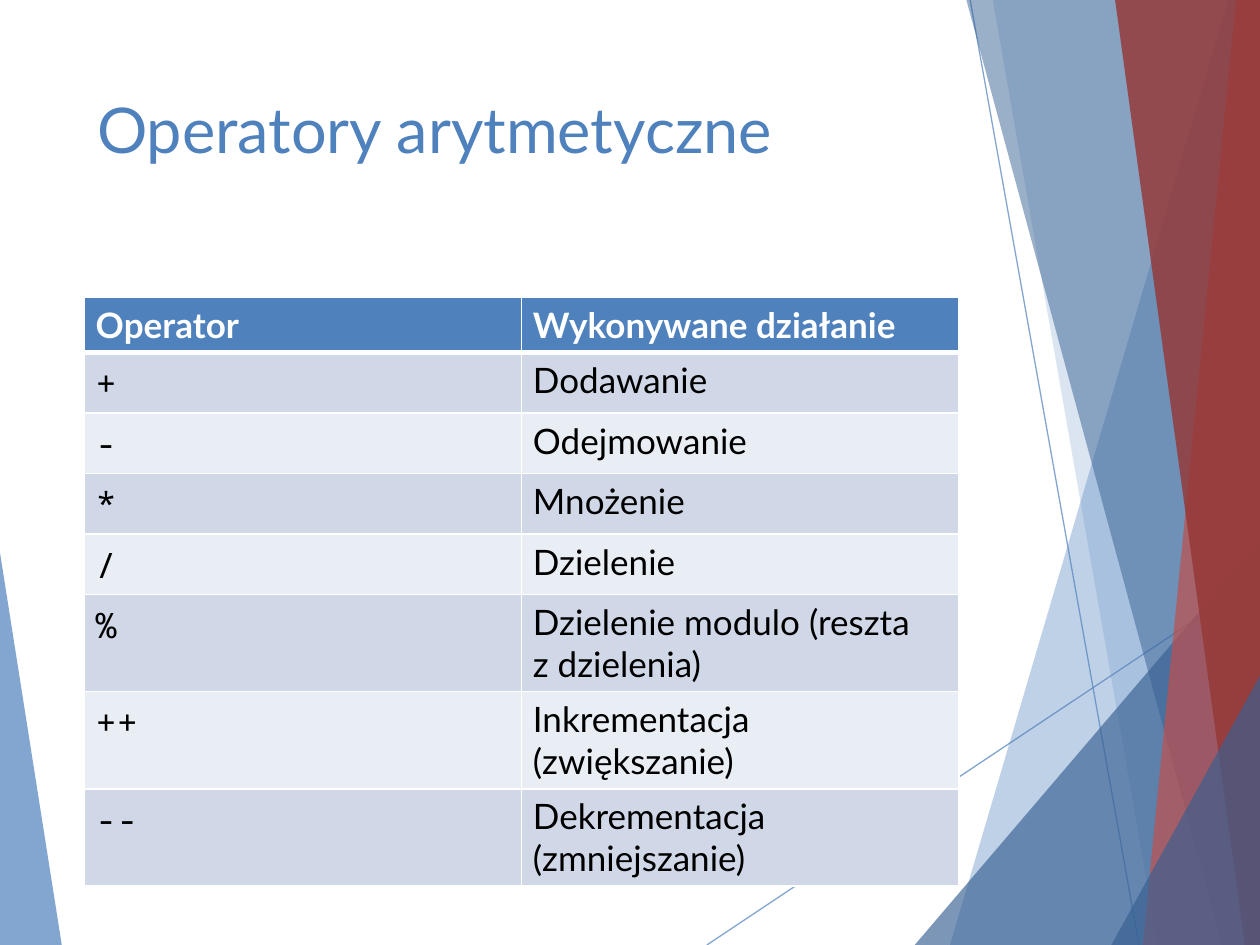
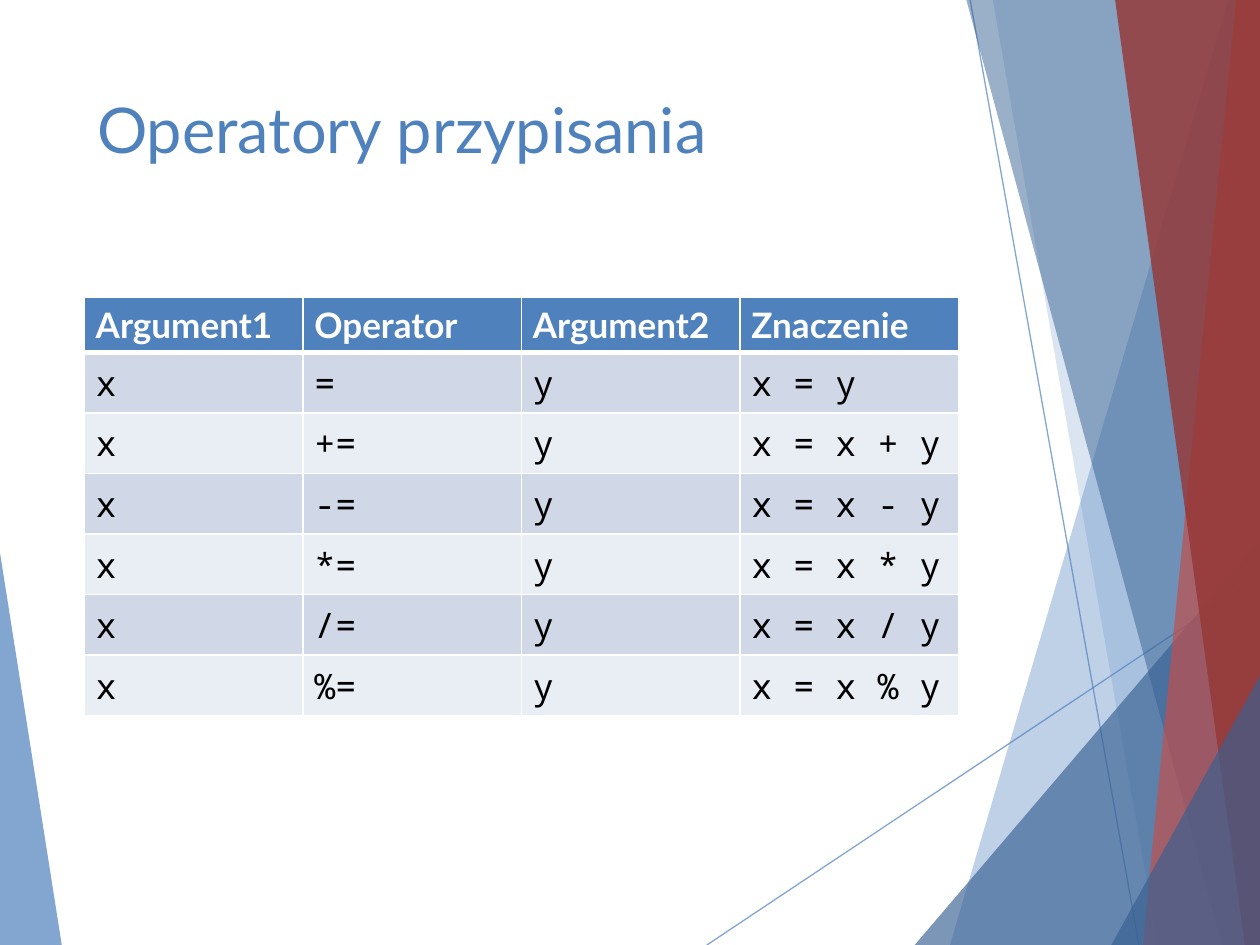
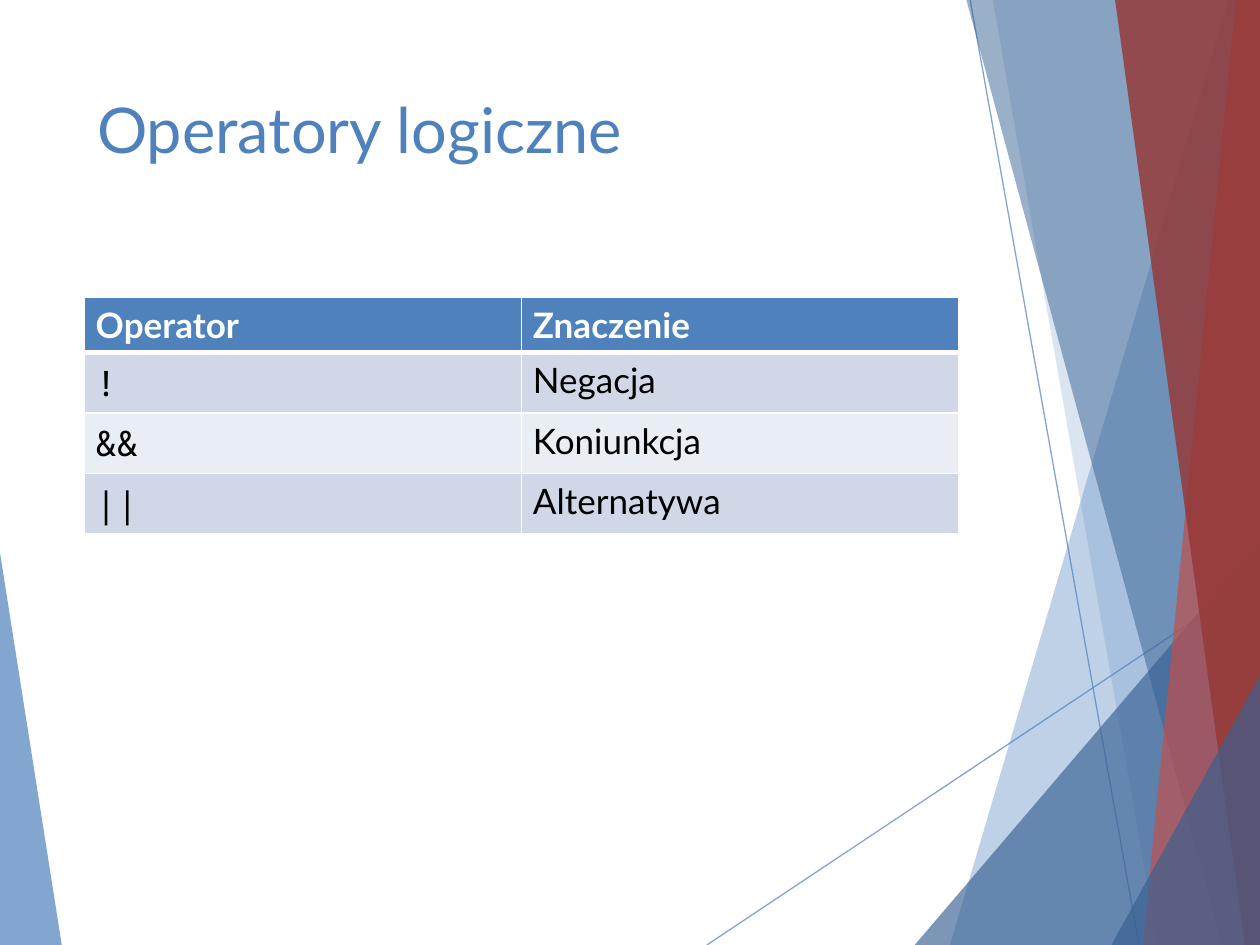
from dataclasses import dataclass

from lxml.etree import SubElement
from pptx import Presentation
from pptx.dml.color import RGBColor
from pptx.enum.shapes import MSO_CONNECTOR
from pptx.enum.text import MSO_ANCHOR, MSO_AUTO_SIZE, PP_ALIGN
from pptx.oxml import parse_xml
from pptx.oxml.ns import nsdecls, qn
from pptx.util import Emu, Inches, Pt

BLUE = RGBColor(0x4F, 0x81, 0xBD)
NAVY = RGBColor(0x37, 0x60, 0x92)
RED = RGBColor(0xC0, 0x50, 0x4D)
DARK_RED = RGBColor(0x95, 0x37, 0x35)
BAND = RGBColor(0xD0, 0xD8, 0xE8)
PALE_BAND = RGBColor(0xE9, 0xED, 0xF4)
WHITE = RGBColor(0xFF, 0xFF, 0xFF)
BLACK = RGBColor(0x00, 0x00, 0x00)
SANS, MONO = "Lato", "Noto Sans Mono"


@dataclass
class Box:
    """A region whose inner places are given in percent of its size."""

    left: int
    top: int
    width: int
    height: int

    def at(self, x, y):
        """Return the point x, y percent into the box."""
        return (Emu(round(self.left + self.width * x / 100)),
                Emu(round(self.top + self.height * y / 100)))

    def inner(self, x, y, width, height):
        """Return the inner box of the given percentages."""
        return Box(*self.at(x, y), Emu(round(self.width * width / 100)),
                   Emu(round(self.height * height / 100)))


PAGE = Box(0, 0, Inches(10), Inches(7.5))
TITLE_BOX = PAGE.inner(6.7, 8.9, 69.4, 19.2)
TABLE_BOX = PAGE.inner(6.7, 31.5, 69.4, 59.6)
ROW_HEIGHT = Inches(0.41)

RAYS = [((56.1, 100), (100, 61)), ((77, 0), (90.4, 100))]
LEFT_FACET = (BLUE, 70, [(0, 58.5), (4.9, 100), (0, 100)])
RIGHT_FACETS = [
    (BLUE, 36, [(97.5, 0), (75.4, 100), (100, 100), (100, 0)]),
    (BLUE, 20, [(78.8, 0), (91.9, 100), (100, 100), (100, 0)]),
    (NAVY, 66, [(72.6, 100), (100, 57.2), (100, 100)]),
    (NAVY, 50, [(76.7, 0), (97, 100), (100, 100), (100, 0)]),
    (RED, 70, [(98.1, 0), (90.7, 100), (100, 100), (100, 0)]),
    (DARK_RED, 82, [(88.5, 0), (98.8, 100), (100, 100), (100, 0)]),
    (NAVY, 66, [(88.2, 100), (100, 71.5), (100, 100)]),
]

SLIDES = [
    ("Operatory arytmetyczne", (MONO, SANS), [
        ("Operator", "Wykonywane działanie"),
        ("+", "Dodawanie"),
        ("-", "Odejmowanie"),
        ("*", "Mnożenie"),
        ("/", "Dzielenie"),
        ("%", "Dzielenie modulo (reszta\nz dzielenia)"),
        ("++", "Inkrementacja (zwiększanie)"),
        ("--", "Dekrementacja (zmniejszanie)"),
    ]),
    ("Operatory przypisania", (MONO,) * 4, [
        ("Argument1", "Operator", "Argument2", "Znaczenie"),
        ("x", "=", "y", "x = y"),
        *[("x", f"{op}=", "y", f"x = x {op} y") for op in "+-*/%"],
    ]),
    ("Operatory logiczne", (MONO, SANS), [
        ("Operator", "Znaczenie"),
        ("!", "Negacja"),
        ("&&", "Koniunkcja"),
        ("||", "Alternatywa"),
    ]),
]


def set_alpha(s, percent):
    """Make the colour of a shape or line partly transparent."""
    color = s.element.spPr.find(".//" + qn("a:srgbClr"))
    SubElement(color, qn("a:alpha"), val=str(percent * 1000))


def add_facet(slide, box, color, alpha, points):
    """Add one translucent polygon inside the box."""
    start, *rest = [box.at(*point) for point in points]
    builder = slide.shapes.build_freeform(*start)
    builder.add_line_segments(rest, close=True)
    s = builder.convert_to_shape()
    s.fill.solid()
    s.fill.fore_color.rgb = color
    set_alpha(s, alpha)
    s.line.fill.background()
    s.shadow.inherit = False
    return s


def add_ray(slide, box, start, end):
    """Add one thin translucent line inside the box."""
    s = slide.shapes.add_connector(
        MSO_CONNECTOR.STRAIGHT, *box.at(*start), *box.at(*end))
    s.line.color.rgb = BLUE
    s.line.width = Pt(0.75)
    set_alpha(s, 70)
    SubElement(s.element.spPr, qn("a:effectLst"))
    return s


def move_to_master(prs, shapes):
    """Place the shapes behind everything on the slide master."""
    tree = prs.slide_master.element.cSld.spTree
    for i, s in enumerate(shapes):
        s.element.find(".//" + qn("p:cNvPr")).set("id", str(100 + i))
        tree.insert(2 + i, s.element)


def add_decor(prs, slide, box):
    """Draw the shared facets and rays and hand them to the master."""
    shapes = [add_facet(slide, box, *LEFT_FACET)]
    shapes += [add_ray(slide, box, *ray) for ray in RAYS]
    shapes += [add_facet(slide, box, *facet) for facet in RIGHT_FACETS]
    move_to_master(prs, shapes)


def write(p, text, font, size, color, bold=False):
    """Write text into a paragraph, one run for each line."""
    for i, line in enumerate(text.split("\n")):
        if i:
            p.add_line_break()
        r = p.add_run()
        r.text = line
        r.font.name = font
        r.font.size = Pt(size)
        r.font.bold = bold
        r.font.color.rgb = color


def add_title(slide, box, text):
    """Move and fill the title placeholder."""
    s = slide.shapes.title
    s.left, s.top, s.width, s.height = box.left, box.top, box.width, box.height
    tf = s.text_frame
    tf.word_wrap = True
    tf.auto_size = MSO_AUTO_SIZE.NONE
    tf.vertical_anchor = MSO_ANCHOR.TOP
    p = tf.paragraphs[0]
    p.alignment = PP_ALIGN.LEFT
    write(p, text, SANS, 36, BLUE)


def set_borders(cell, top, bottom):
    """Give a cell white borders, with top and bottom widths in points."""
    tc_pr = cell._tc.get_or_add_tcPr()
    for i, (side, width) in enumerate(zip("LRTB", (1, 1, top, bottom))):
        tc_pr.insert(i, parse_xml(
            f'<a:ln{side} {nsdecls("a")} w="{Pt(width)}"><a:solidFill>'
            f'<a:srgbClr val="{WHITE}"/></a:solidFill></a:ln{side}>'))


def add_operator_table(slide, box, fonts, rows):
    """Add a banded table of operators at the top of the box."""
    table = slide.shapes.add_table(
        len(rows), len(fonts), box.left, box.top, box.width,
        ROW_HEIGHT * len(rows)).table
    for i, row in enumerate(rows):
        header = i == 0
        fill = BLUE if header else (PALE_BAND, BAND)[i % 2]
        for j, text in enumerate(row):
            cell = table.cell(i, j)
            cell.margin_left = cell.margin_right = Inches(0.09)
            cell.fill.solid()
            cell.fill.fore_color.rgb = fill
            set_borders(cell, 3 if i == 1 else 1, 3 if header else 1)
            write(cell.text_frame.paragraphs[0], text,
                  SANS if header else fonts[j], 20,
                  WHITE if header else BLACK, header)


def add_operator_slide(prs, title, fonts, rows):
    """Add a slide with a title and an operator table."""
    slide = prs.slides.add_slide(prs.slide_layouts.get_by_name("Title Only"))
    add_title(slide, TITLE_BOX, title)
    add_operator_table(slide, TABLE_BOX, fonts, rows)
    return slide


def main():
    """Build and save the presentation."""
    prs = Presentation()
    prs.slide_width, prs.slide_height = PAGE.width, PAGE.height
    slides = [add_operator_slide(prs, *content) for content in SLIDES]
    add_decor(prs, slides[0], PAGE)
    prs.save("out.pptx")


if __name__ == "__main__":
    main()
